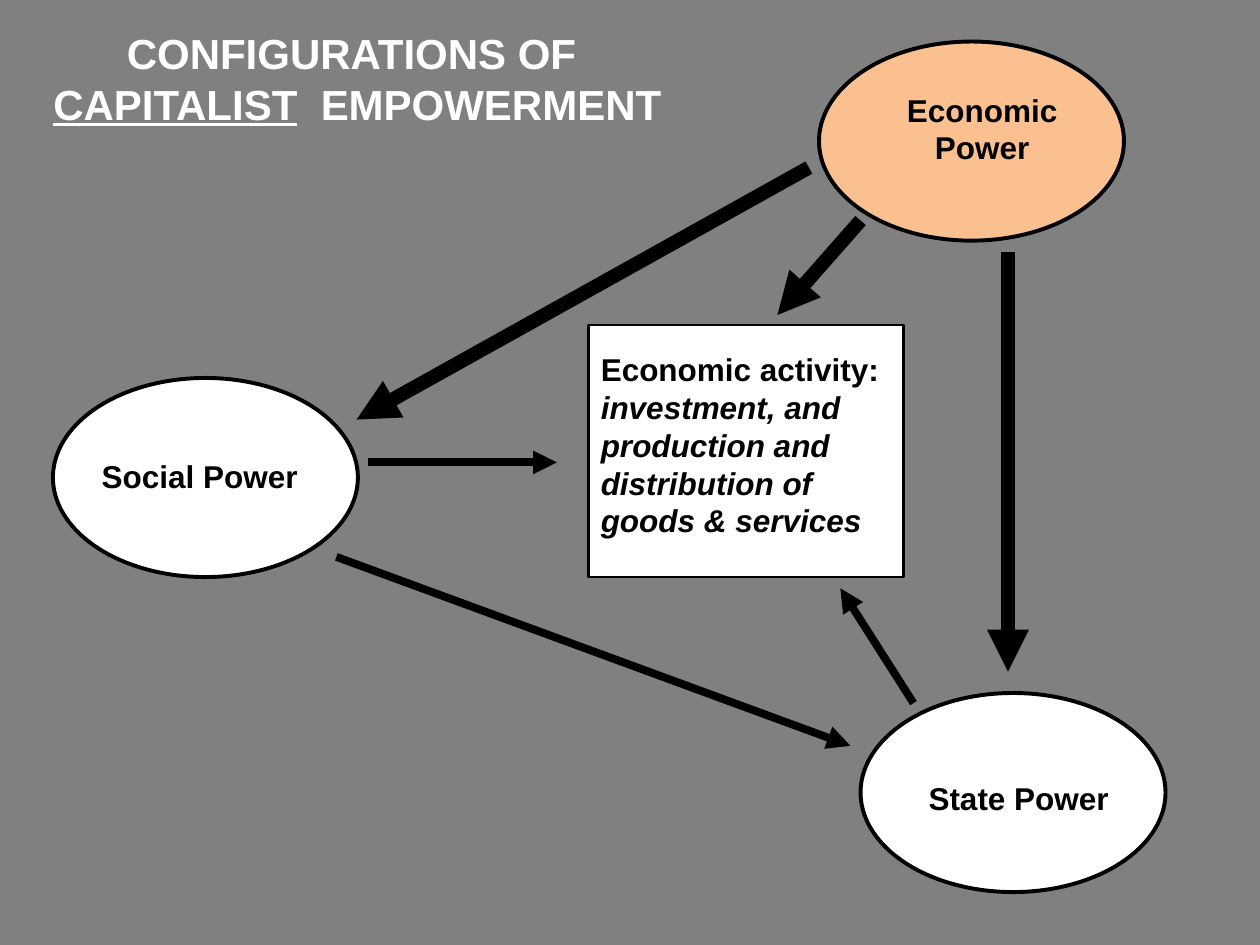
import lxml.etree
import pptx
import pptx.dml.color
import pptx.enum.shapes
import pptx.enum.text
import pptx.oxml.ns
import pptx.util

Inches = pptx.util.Inches
Pt = pptx.util.Pt
SHAPES = pptx.enum.shapes.MSO_SHAPE
ALIGN = pptx.enum.text.PP_ALIGN

COLORS = {
    name: pptx.dml.color.RGBColor.from_string(value)
    for name, value in {
        "background": "808080",
        "white": "FFFFFF",
        "black": "000000",
        "highlight": "FAC090",
    }.items()
}


def add_block(kind, left, top, width, height, fill, line_width=None):
    shape = slide.shapes.add_shape(
        kind, Inches(left), Inches(top), Inches(width), Inches(height)
    )
    shape.shadow.inherit = False
    shape.fill.solid()
    shape.fill.fore_color.rgb = COLORS[fill]
    if line_width:
        shape.line.color.rgb = COLORS["black"]
        shape.line.width = Pt(line_width)
    else:
        shape.line.fill.background()
    return shape


def write_text(shape, paragraphs, size, color, alignment, top_inset=0.05):
    frame = shape.text_frame
    frame.word_wrap = True
    frame.vertical_anchor = pptx.enum.text.MSO_ANCHOR.TOP
    frame.margin_top = Inches(top_inset)
    for index, runs in enumerate(paragraphs):
        paragraph = frame.add_paragraph() if index else frame.paragraphs[0]
        paragraph.alignment = alignment
        for text, style in runs:
            run = paragraph.add_run()
            run.text = text
            run.font.name = "Arial"
            run.font.size = Pt(size)
            run.font.bold = True
            run.font.italic = style == "italic"
            run.font.underline = style == "underline"
            run.font.color.rgb = COLORS[color]


presentation = pptx.Presentation()
presentation.slide_width = Inches(10)
presentation.slide_height = Inches(7.5)
slide = presentation.slides.add_slide(presentation.slide_layouts[6])
slide.background.fill.solid()
slide.background.fill.fore_color.rgb = COLORS["background"]

for left, top, fill in [
    (0.42, 3, "white"),
    (6.5, 0.33, "highlight"),
    (6.83, 5.5, "white"),
]:
    add_block(SHAPES.OVAL, left, top, 2.42, 1.58, fill, 2.25)

economic_label = slide.shapes.add_textbox(
    Inches(6.92), Inches(0.67), Inches(1.75), Inches(0.92)
)
write_text(
    economic_label,
    [[("Economic", None)], [("Power", None)]],
    18, "black", ALIGN.CENTER,
)

for text, left, top, height, top_inset in [
    ("State Power", 7.17, 5.83, 0.92, 0.35),
    ("Social Power", 0.67, 3.58, 0.5, 0.05),
]:
    label = add_block(SHAPES.RECTANGLE, left, top, 1.83, height, "white")
    write_text(label, [[(text, None)]], 18, "black", ALIGN.CENTER, top_inset)

title = slide.shapes.add_textbox(Inches(0), Inches(0.17), Inches(5.58), Inches(0.91))
write_text(
    title,
    [
        [("CONFIGURATIONS OF", None)],
        [(" ", None), ("CAPITALIST", "underline"), ("  EMPOWERMENT", None)],
    ],
    24, "white", ALIGN.CENTER,
)
title.text_frame.auto_size = pptx.enum.text.MSO_AUTO_SIZE.SHAPE_TO_FIT_TEXT

for start_x, start_y, end_x, end_y, width in [
    (6.42, 1.33, 2.83, 3.33, 8),
    (2.67, 4.42, 6.75, 5.92, 4.5),
    (2.92, 3.67, 4.42, 3.67, 4.5),
    (8, 2, 8, 5.33, 8),
    (7.25, 5.58, 6.67, 4.67, 4.5),
    (6.83, 1.75, 6.17, 2.5, 8),
]:
    arrow = slide.shapes.add_connector(
        pptx.enum.shapes.MSO_CONNECTOR.STRAIGHT,
        Inches(start_x), Inches(start_y), Inches(end_x), Inches(end_y),
    )
    arrow.line.color.rgb = COLORS["black"]
    arrow.line.width = Pt(width)
    tail = lxml.etree.SubElement(
        arrow.line._get_or_add_ln(), pptx.oxml.ns.qn("a:tailEnd")
    )
    tail.set("type", "triangle")
    lxml.etree.SubElement(
        arrow._element.spPr, pptx.oxml.ns.qn("a:effectLst")
    )

activity = add_block(SHAPES.RECTANGLE, 4.67, 2.58, 2.5, 2, "white", 1.5)
write_text(
    activity,
    [[
        ("Economic activity:", None),
        (" investment, and production and distribution of goods & services", "italic"),
    ]],
    18, "black", ALIGN.LEFT, 0.2,
)

presentation.save("out.pptx")
